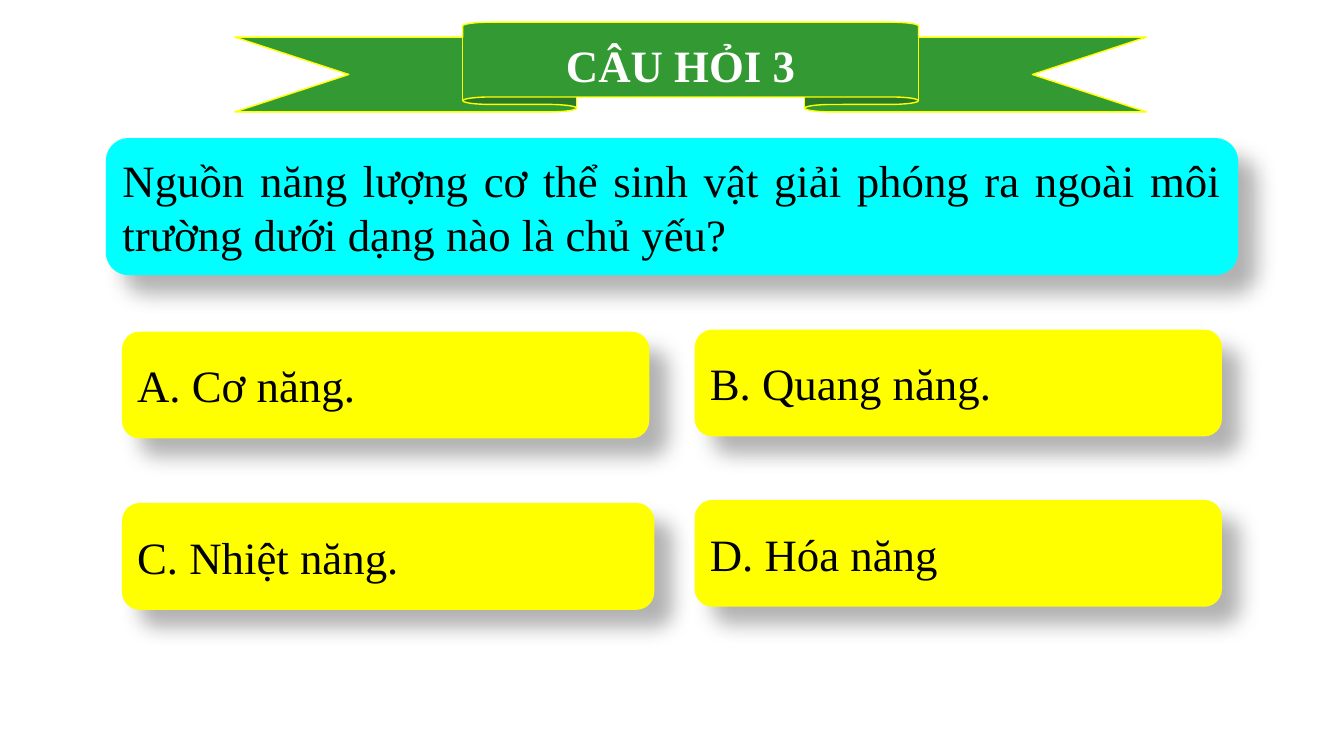
from lxml.etree import SubElement
from pptx import Presentation
from pptx.dml.color import RGBColor
from pptx.enum.shapes import MSO_SHAPE as Shape
from pptx.enum.text import MSO_ANCHOR as Anchor, PP_ALIGN as Align
from pptx.oxml.ns import qn
from pptx.util import Inches, Pt

GREEN = RGBColor(0x33, 0x99, 0x33)
YELLOW = RGBColor(0xFF, 0xFF, 0x00)
CYAN = RGBColor(0x00, 0xFF, 0xFF)
WHITE = RGBColor(0xFF, 0xFF, 0xFF)
BLACK = RGBColor(0x00, 0x00, 0x00)


class QuizSlide:
    """Holds the text style and the slide being built."""
    font = "Times New Roman"
    size = Pt(32)

    def __init__(self, slide):
        self.shapes = slide.shapes

    def set_text(self, tf, text, color, align, bold=False):
        tf.word_wrap = True
        p = tf.paragraphs[0]
        p.text = text
        p.alignment = align
        p.font.name, p.font.size, p.font.bold = self.font, self.size, bold
        p.font.color.rgb = color

    def shape(self, kind, box, fill):
        sp = self.shapes.add_shape(kind, *map(Inches, box))
        sp.shadow.inherit = False
        sp.fill.solid()
        sp.fill.fore_color.rgb = fill
        return sp

    def ribbon(self, box):
        sp = self.shape(Shape.UP_RIBBON, box, GREEN)
        sp.line.color.rgb = YELLOW
        sp.line.width = Pt(1)

    def title(self, box, text):
        tf = self.shapes.add_textbox(*map(Inches, box)).text_frame
        self.set_text(tf, text, WHITE, Align.CENTER, bold=True)

    def card(self, box, text, fill):
        sp = self.shape(Shape.ROUNDED_RECTANGLE, box, fill)
        sp.line.fill.background()
        self.drop_shadow(sp)
        sp.text_frame.vertical_anchor = Anchor.MIDDLE
        self.set_text(sp.text_frame, text, BLACK, Align.JUSTIFY)

    def drop_shadow(self, sp):
        effects = sp._element.spPr.find(qn("a:effectLst"))
        shadow = SubElement(effects, qn("a:outerShdw"), blurRad=str(Pt(15)),
                            dist=str(Pt(18)), dir=str(45 * 60000),
                            algn="tl", rotWithShape="0")
        color = SubElement(shadow, qn("a:srgbClr"), val=str(BLACK))
        SubElement(color, qn("a:alpha"), val="30000")


def main():
    prs = Presentation()
    prs.slide_width, prs.slide_height = Inches(13.33), Inches(7.5)
    quiz = QuizSlide(prs.slides.add_slide(prs.slide_layouts[6]))

    # Heading banner
    quiz.ribbon((2.33, 0.22, 9.04, 0.89))
    quiz.title((4.52, 0.33, 4.46, 0.64), "CÂU HỎI 3")

    # Question
    quiz.card((1.05, 1.37, 11.23, 1.36),
              "Nguồn năng lượng cơ thể sinh vật giải phóng ra ngoài "
              "môi trường dưới dạng nào là chủ yếu?", CYAN)

    # Answers
    answers = [
        (1.21, 3.29, 5.23, "A. Cơ năng."),
        (6.89, 3.27, 5.23, "B. Quang năng."),
        (1.21, 4.99, 5.28, "C. Nhiệt năng."),
        (6.89, 4.96, 5.23, "D. Hóa năng"),
    ]
    for left, top, width, text in answers:
        quiz.card((left, top, width, 1.06), text, YELLOW)

    prs.save("out.pptx")


if __name__ == "__main__":
    main()
